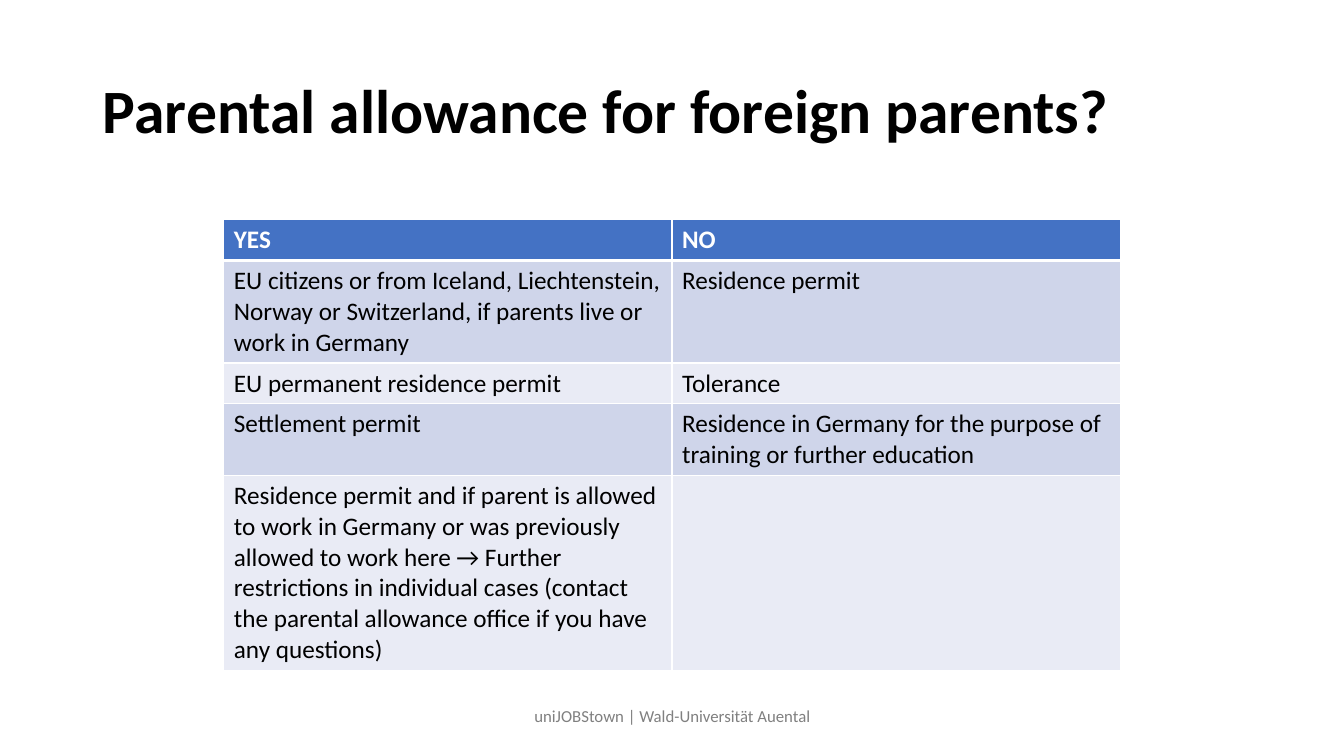
import pptx
import pptx.dml.color
import pptx.enum.text
import pptx.oxml
import pptx.oxml.ns
import pptx.util
from pptx.dml.color import RGBColor
from pptx.util import Inches

FONT = "Calibri"
BLACK = RGBColor(0x00, 0x00, 0x00)
WHITE = RGBColor(0xFF, 0xFF, 0xFF)
GREY = RGBColor(0x80, 0x80, 0x80)
HEADER_BLUE = RGBColor(0x44, 0x72, 0xC4)
BANDS = (RGBColor(0xCF, 0xD5, 0xEA), RGBColor(0xE9, 0xEB, 0xF5))

ROWS = [
    ("YES", "NO"),
    ("EU citizens or from Iceland, Liechtenstein, Norway or Switzerland, "
     "if parents live or work in Germany", "Residence permit"),
    ("EU permanent residence permit", "Tolerance"),
    ("Settlement permit",
     "Residence in Germany for the purpose of training or further education"),
    ("Residence permit and if parent is allowed to work in Germany or was "
     "previously allowed to work here → Further restrictions in individual "
     "cases (contact the parental allowance office if you have any questions)", ""),
]
ROW_HEIGHTS = (0.4, 1.0, 0.4, 0.7, 1.9)


def format_text(paragraph, size, color, bold=False):
    for run in paragraph.runs:
        run.font.name = FONT
        run.font.size = pptx.util.Pt(size)
        run.font.color.rgb = color
        run.font.bold = bold


def place(shape, left, top, width, height):
    shape.left, shape.top = Inches(left), Inches(top)
    shape.width, shape.height = Inches(width), Inches(height)


def set_border(cell, position, side, points):
    """Add one white cell border; position keeps the order left, right, top, bottom."""
    line = pptx.oxml.parse_xml(
        f'<a:ln{side} {pptx.oxml.ns.nsdecls("a")} w="{pptx.util.Pt(points)}">'
        f'<a:solidFill><a:srgbClr val="{WHITE}"/></a:solidFill></a:ln{side}>')
    cell._tc.get_or_add_tcPr().insert(position, line)


def add_title(slide, text):
    title = slide.shapes.title
    place(title, 0.92, 0.4, 11.5, 1.45)
    title.text_frame.text = text
    title.text_frame.vertical_anchor = pptx.enum.text.MSO_ANCHOR.MIDDLE
    paragraph = title.text_frame.paragraphs[0]
    paragraph.alignment = pptx.enum.text.PP_ALIGN.LEFT
    paragraph.line_spacing = 0.9
    format_text(paragraph, 44, BLACK, bold=True)


def add_permit_table(slide):
    frame = slide.shapes.add_table(len(ROWS), len(ROWS[0]), Inches(2.22), Inches(2.18),
                                   Inches(8.89), Inches(sum(ROW_HEIGHTS)))
    table = frame.table
    for row_index, (texts, height) in enumerate(zip(ROWS, ROW_HEIGHTS)):
        table.rows[row_index].height = Inches(height)
        is_header = row_index == 0
        for column_index, text in enumerate(texts):
            cell = table.cell(row_index, column_index)
            cell.text_frame.text = text
            format_text(cell.text_frame.paragraphs[0], 18,
                        WHITE if is_header else BLACK, bold=is_header)
            cell.fill.solid()
            cell.fill.fore_color.rgb = HEADER_BLUE if is_header else BANDS[(row_index - 1) % 2]
            # A thicker line separates the header from the body
            widths = {"L": 1, "R": 1, "T": 3 if row_index == 1 else 1, "B": 3 if is_header else 1}
            for position, (side, points) in enumerate(widths.items()):
                set_border(cell, position, side, points)


def add_footer(slide, text):
    box = slide.shapes.add_textbox(Inches(4.42), Inches(6.9), Inches(4.5), Inches(0.4))
    box.text_frame.word_wrap = True
    box.text_frame.vertical_anchor = pptx.enum.text.MSO_ANCHOR.MIDDLE
    box.text_frame.text = text
    paragraph = box.text_frame.paragraphs[0]
    paragraph.alignment = pptx.enum.text.PP_ALIGN.CENTER
    paragraph.space_after = pptx.util.Pt(6)
    format_text(paragraph, 12, GREY)


def main():
    presentation = pptx.Presentation()
    presentation.slide_width = Inches(13.33)
    presentation.slide_height = Inches(7.5)
    slide = presentation.slides.add_slide(presentation.slide_layouts[5])

    add_title(slide, "Parental allowance for foreign parents?")
    add_permit_table(slide)
    add_footer(slide, "uniJOBStown | Wald-Universität Auental")
    presentation.save("out.pptx")


if __name__ == "__main__":
    main()
